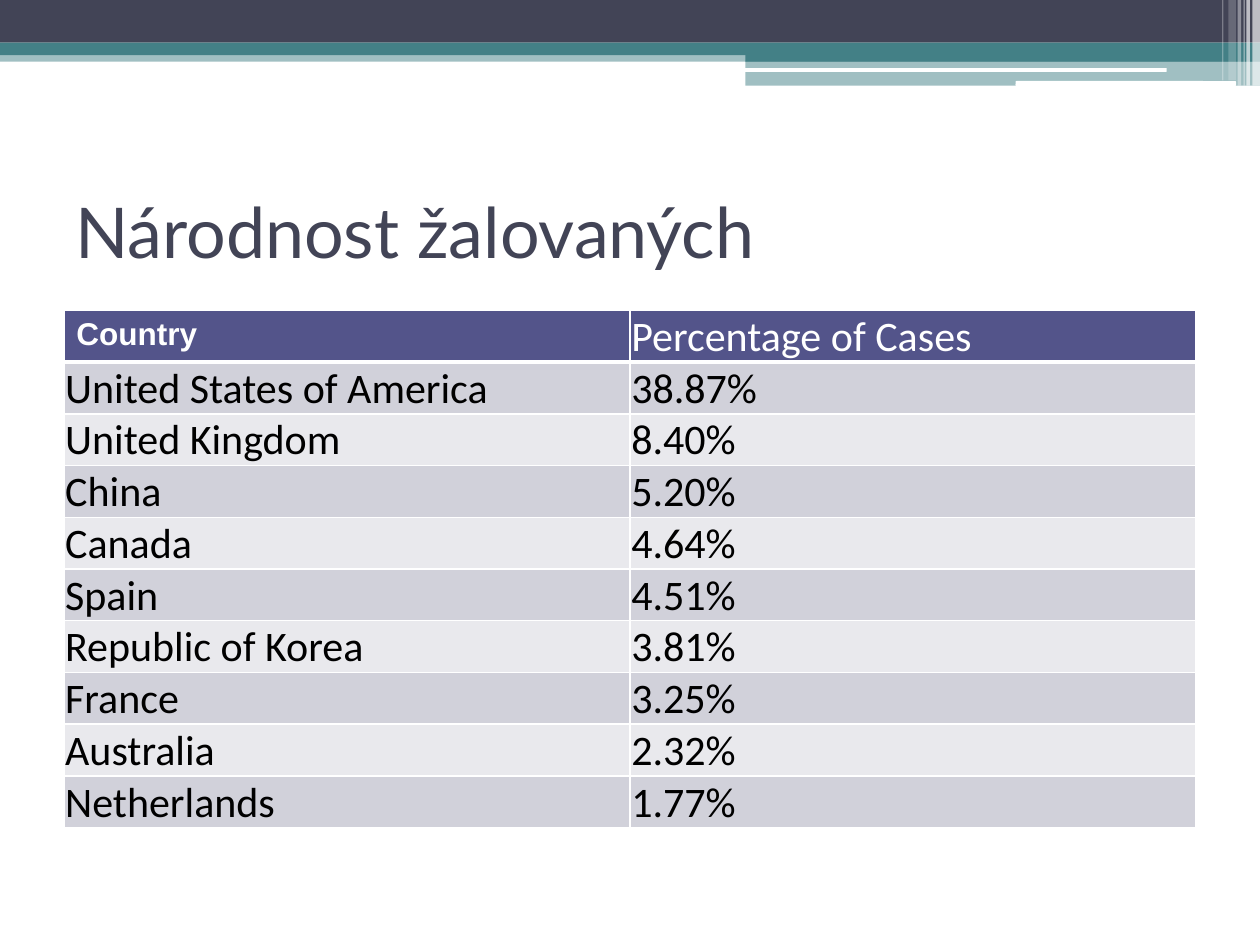
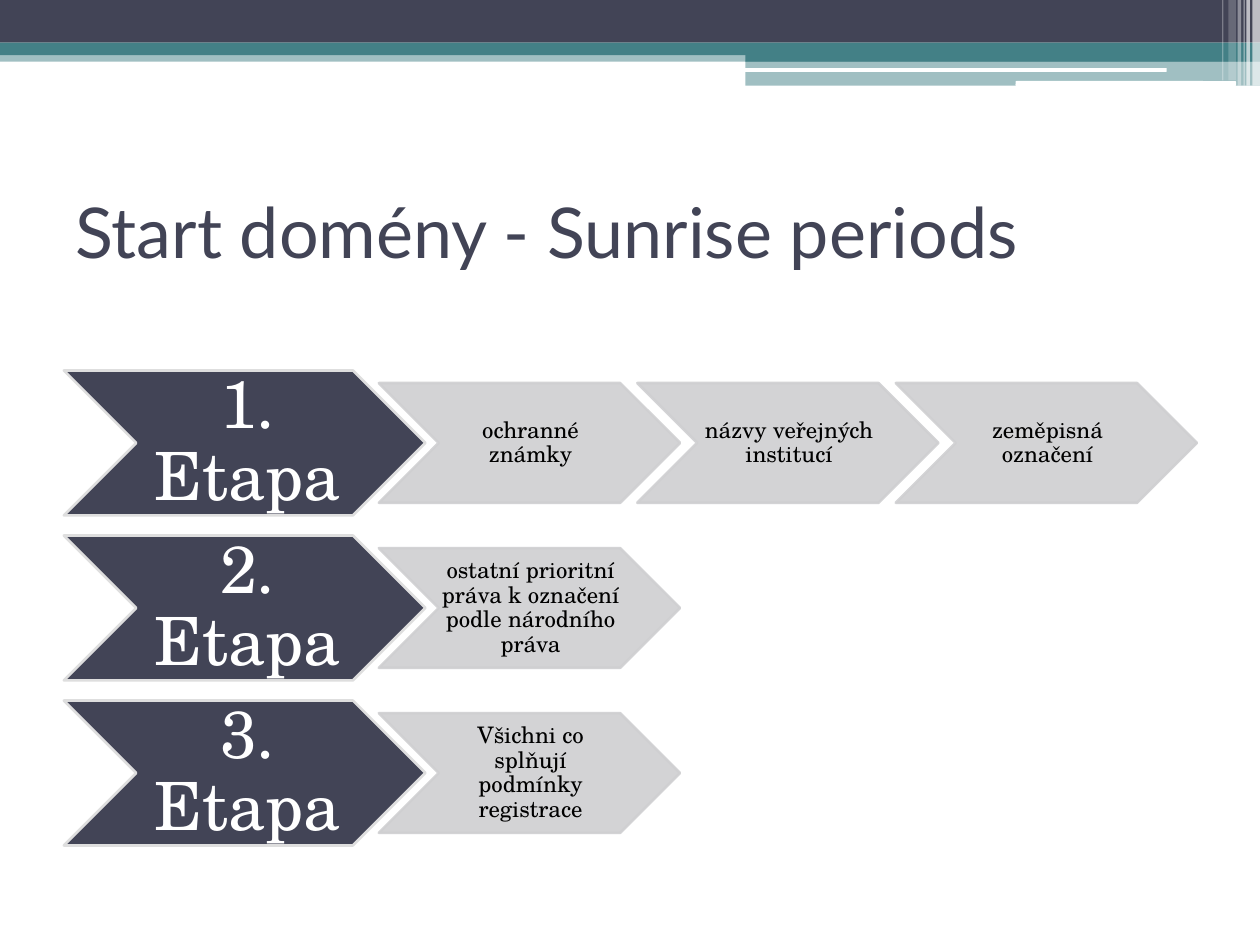
from dataclasses import dataclass

from lxml import etree
from pptx import Presentation
from pptx.dml.color import RGBColor
from pptx.enum import shapes, text
from pptx.oxml.ns import qn
from pptx.util import Pt


@dataclass(frozen=True)
class Theme:
    """Colours, fonts and type sizes of the deck."""
    navy: str = "424456"
    teal: str = "438086"
    white: str = "FFFFFF"
    black: str = "000000"
    header: str = "53548A"
    row_dark: str = "D1D1DA"
    row_light: str = "E9E9ED"
    grey: str = "CFCFD1"
    edge: str = "DEDEDE"
    title_font: str = "Lato"
    label_font: str = "Arial"
    table_font: str = "Calibri"
    chevron_font: str = "TeX Gyre Schola"
    title_size: int = 40
    label_size: int = 18
    table_size: int = 24
    stage_size: int = 38
    step_size: int = 13


class Deck:
    """Holds the theme and the current slide and draws each kind of element."""

    def __init__(self, theme):
        self.theme = theme
        self.prs = Presentation()
        self.prs.slide_width, self.prs.slide_height = Pt(720), Pt(540)

    def slide(self, title):
        """Start a slide with the top bands and a title."""
        self.s = self.prs.slides.add_slide(self.prs.slide_layouts[6])
        self.bands()
        self.title(title)

    def shape(self, kind, box, fill, alpha=100, line=None):
        """Draw a preset shape with an optional outline and opacity."""
        sp = self.s.shapes.add_shape(kind, *map(Pt, box))
        sp.shadow.inherit = False
        sp.fill.solid()
        sp.fill.fore_color.rgb = RGBColor.from_string(fill)
        if line:
            sp.line.color.rgb = RGBColor.from_string(line)
            sp.line.width = Pt(1.5)
        else:
            sp.line.fill.background()
        if alpha < 100:
            for clr in sp._element.spPr.iter(qn("a:srgbClr")):
                etree.SubElement(clr, qn("a:alpha"), val=str(alpha * 1000))
        return sp

    def bands(self):
        """Draw the coloured bands and stripes at the top."""
        t, rect, bar = self.theme, shapes.MSO_SHAPE.RECTANGLE, shapes.MSO_SHAPE.ROUNDED_RECTANGLE
        self.shape(rect, (0, 28.8, 720, 6.5), t.teal, 50)
        self.shape(rect, (0, 0, 720, 24.4), t.navy)
        self.shape(rect, (0, 24.4, 720, 7.2), t.teal)
        self.shape(rect, (426, 28.2, 294, 7.1), t.teal)
        self.shape(rect, (426, 34.7, 294, 14.2), t.teal, 50)
        self.shape(bar, (425.5, 38.9, 241.2, 2.2), t.white)
        self.shape(bar, (580.3, 46.3, 126, 2.8), t.white)
        stripes = ((715.6, 4.3, 49, 65), (712.2, 2.1, 49, 65), (710.6, 0.7, 49, 60),
                   (707.2, 2.1, 49, 40), (702, 4.3, 46, 20), (698.4, 0.7, 46, 30))
        for left, width, height, alpha in stripes:
            self.shape(rect, (left, 0, width, height), t.white, alpha)

    def label(self, tf, words, font, size, color, bold=False):
        """Set one paragraph of text and format its run."""
        tf.text = words
        p = tf.paragraphs[0]
        f = p.runs[0].font
        f.name, f.size, f.bold = font, Pt(size), bold
        f.color.rgb = RGBColor.from_string(color)
        return p

    def title(self, words):
        """Add the slide title."""
        t = self.theme
        tf = self.s.shapes.add_textbox(Pt(36), Pt(90), Pt(648), Pt(84)).text_frame
        tf.word_wrap = True
        tf.vertical_anchor = text.MSO_ANCHOR.MIDDLE
        self.label(tf, words, t.title_font, t.title_size, t.navy)

    def cell(self, cell, words, fill, color, bottom=1):
        """Fill, border and label a table cell."""
        t = self.theme
        tc_pr = cell._tc.get_or_add_tcPr()
        for side, width in (("L", 1), ("R", 1), ("T", 1), ("B", bottom)):
            ln = etree.SubElement(tc_pr, qn(f"a:ln{side}"), w=str(Pt(width)))
            solid = etree.SubElement(ln, qn("a:solidFill"))
            etree.SubElement(solid, qn("a:srgbClr"), val=t.white)
        cell.fill.solid()
        cell.fill.fore_color.rgb = RGBColor.from_string(fill)
        cell.margin_left = cell.margin_right = cell.margin_top = Pt(0.75)
        cell.margin_bottom = 0
        cell.vertical_anchor = text.MSO_ANCHOR.BOTTOM
        self.label(cell.text_frame, words, t.table_font, t.table_size, color)

    def table(self, box, rows):
        """Draw a banded table whose first row is the header."""
        t = self.theme
        table = self.s.shapes.add_table(len(rows), len(rows[0]), *map(Pt, box)).table
        for i, row in enumerate(rows):
            table.rows[i].height = Pt(box[3] / len(rows))
            for j, words in enumerate(row):
                if i == 0:
                    self.cell(table.cell(i, j), words, t.header, t.white, 3)
                else:
                    fill = t.row_dark if i % 2 else t.row_light
                    self.cell(table.cell(i, j), words, fill, t.black)
        corner = table.cell(0, 0)
        corner.margin_left = corner.margin_right = Pt(7.2)
        corner.margin_top = corner.margin_bottom = Pt(3.6)
        corner.vertical_anchor = text.MSO_ANCHOR.TOP
        self.label(corner.text_frame, rows[0][0], t.label_font, t.label_size, t.white, True)

    def chevron(self, box, words, size, color, inset, **style):
        """Draw a chevron with centred text."""
        sp = self.shape(shapes.MSO_SHAPE.CHEVRON, box, **style)
        tf = sp.text_frame
        tf.word_wrap = True
        tf.vertical_anchor = text.MSO_ANCHOR.MIDDLE
        tf.margin_left, tf.margin_right = Pt(inset), 0
        tf.margin_top = tf.margin_bottom = Pt(inset / 2)
        p = self.label(tf, words, self.theme.chevron_font, size, color)
        p.alignment = text.PP_ALIGN.CENTER
        p.line_spacing = 0.9

    def stages(self, left, top, stages):
        """Draw one row per stage: a large chevron, then its steps."""
        t = self.theme
        stage_w, stage_h, step_w, step_h = 206.6, 82.8, 172.1, 68.4
        for i, (name, steps) in enumerate(stages):
            y = top + i * 94.3
            self.chevron((left, y, stage_w, stage_h), name, t.stage_size, t.white, 3.6,
                         fill=t.navy, line=t.edge)
            for j, step in enumerate(steps):
                box = (left + 180 + j * 147.7, y + (stage_h - step_h) / 2, step_w, step_h)
                self.chevron(box, step, t.step_size, t.black, 1.2,
                             fill=t.grey, alpha=90, line=t.grey)


def main():
    """Build both slides and save the deck."""
    deck = Deck(Theme())

    deck.slide("Národnost žalovaných")
    deck.table((36.5, 177.3, 647, 295), [
        ("Country", "Percentage of Cases"),
        ("United States of America", "38.87%"),
        ("United Kingdom", "8.40%"),
        ("China", "5.20%"),
        ("Canada", "4.64%"),
        ("Spain", "4.51%"),
        ("Republic of Korea", "3.81%"),
        ("France", "3.25%"),
        ("Australia", "2.32%"),
        ("Netherlands", "1.77%"),
    ])

    deck.slide("Start domény - Sunrise periods")
    deck.stages(36.5, 211.7, [
        ("1. Etapa", ["ochranné známky", "názvy veřejných institucí", "zeměpisná označení"]),
        ("2. Etapa", ["ostatní prioritní práva k označení podle národního práva"]),
        ("3. Etapa", ["Všichni co splňují podmínky registrace"]),
    ])

    deck.prs.save("out.pptx")


if __name__ == "__main__":
    main()
